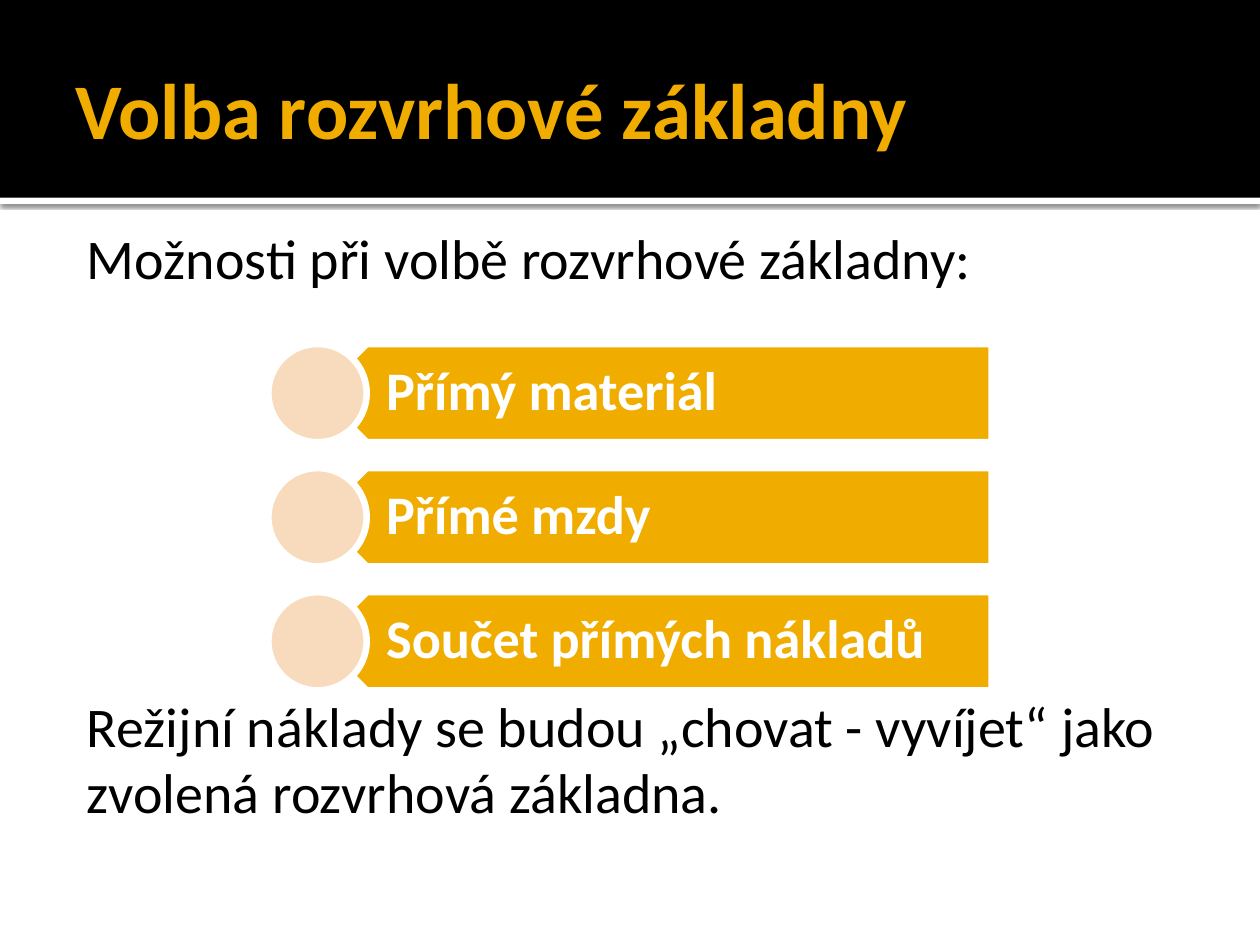
import lxml.etree
import pptx
import pptx.dml.color
import pptx.enum.shapes
import pptx.enum.text
import pptx.oxml
import pptx.oxml.ns
import pptx.util

Pt = pptx.util.Pt
SHAPE = pptx.enum.shapes.MSO_SHAPE
ANCHOR = pptx.enum.text.MSO_ANCHOR
COLORS = {"black": "000000", "white": "FFFFFF", "gold": "F0AD00", "peach": "F8DBBD"}
OPTIONS = ["Přímý materiál", "Přímé mzdy", "Součet přímých nákladů"]
BODY = [
    ("Možnosti při volbě rozvrhové základny:", 0),
    ("Režijní náklady se budou „chovat - vyvíjet“ jako", 230),
    ("zvolená rozvrhová základna.", 0),
]


def rgb(name):
    return pptx.dml.color.RGBColor.from_string(COLORS[name])


def place(sp, box):
    sp.left, sp.top, sp.width, sp.height = (Pt(v) for v in box)


def add_shape(slide, kind, box, fill, line=None):
    sp = slide.shapes.add_shape(kind, *(Pt(v) for v in box))
    sp.shadow.inherit = False
    sp.fill.solid()
    sp.fill.fore_color.rgb = rgb(fill)
    if line:
        sp.line.color.rgb = rgb(line)
        sp.line.width = Pt(3.78)
    else:
        sp.line.fill.background()
    return sp


def set_frame(sp, insets, anchor):
    tf = sp.text_frame
    tf.word_wrap = True
    tf.auto_size = pptx.enum.text.MSO_AUTO_SIZE.NONE
    tf.vertical_anchor = anchor
    tf.margin_left, tf.margin_top, tf.margin_right, tf.margin_bottom = (
        Pt(v) for v in insets)
    return tf


def write(p, text, size, color, bold=False, before=0, spacing=1.0):
    p.alignment = pptx.enum.text.PP_ALIGN.LEFT
    p.space_before = Pt(before)
    p.line_spacing = spacing
    r = p.add_run()
    r.text = text
    r.font.name = "Calibri"
    r.font.size = Pt(size)
    r.font.bold = bold
    r.font.color.rgb = rgb(color)


def add_header(slide, box):
    x, y, w, h = box
    strip = add_shape(slide, SHAPE.RECTANGLE, (x, y + h, w, 3.6), "white")
    effects = strip._element.spPr.find(pptx.oxml.ns.qn("a:effectLst"))
    effects.append(pptx.oxml.parse_xml(
        f'<a:outerShdw {pptx.oxml.ns.nsdecls("a")} blurRad="{Pt(2.5)}" '
        f'dist="{Pt(0.8)}" dir="5400000" algn="tl" rotWithShape="0">'
        '<a:srgbClr val="000000"><a:alpha val="60000"/></a:srgbClr></a:outerShdw>'))
    band = add_shape(slide, SHAPE.RECTANGLE, box, "black")
    for i, sp in enumerate((strip, band)):
        slide.shapes._spTree.insert(2 + i, sp._element)
    title = slide.shapes.title
    place(title, (x + 36, y + 12.24, w - 72, 98.64))
    tf = set_frame(title, (7.2, 3.6, 3.6, 3.6), ANCHOR.MIDDLE)
    write(tf.paragraphs[0], "Volba rozvrhové základny", 45, "gold", bold=True)


def add_body(slide, box):
    body = slide.placeholders[1]
    place(body, box)
    tf = set_frame(body, (4.32, 7.2, 7.2, 3.6), ANCHOR.TOP)
    for i, (text, before) in enumerate(BODY):
        p = tf.add_paragraph() if i else tf.paragraphs[0]
        write(p, text, 32, "black", before=before, spacing=0.98)
        pPr = p._p.get_or_add_pPr()
        pPr.set("marL", str(Pt(9.36)))
        pPr.set("indent", "0")
        lxml.etree.SubElement(pPr, pptx.oxml.ns.qn("a:buNone"))


def add_options(slide, box):
    x, y, w, h = box
    size = 56.16
    pitch = (h - size) / (len(OPTIONS) - 1)
    for i, text in enumerate(OPTIONS):
        top = y + i * pitch
        bar = add_shape(slide, SHAPE.PENTAGON,
                        (x + size / 2, top, w - size / 2, size), "gold", "white")
        bar.rotation = 180
        label = slide.shapes.add_textbox(
            Pt(x + 42.12), Pt(top), Pt(w - 42.12), Pt(size))
        tf = set_frame(label, (25.2, 9.36, 17.28, 9.36), ANCHOR.MIDDLE)
        write(tf.paragraphs[0], text, 31, "white", bold=True, spacing=0.9)
        add_shape(slide, SHAPE.OVAL, (x, top, size, size), "peach", "white")


def main():
    prs = pptx.Presentation()
    prs.slide_width, prs.slide_height = Pt(720), Pt(540)
    slide = prs.slides.add_slide(prs.slide_layouts[1])
    add_header(slide, (0, 0, 720, 113))
    add_body(slide, (36, 122.4, 648, 381.6))
    add_options(slide, (153.36, 196.56, 413.28, 198))
    prs.save("out.pptx")


if __name__ == "__main__":
    main()
